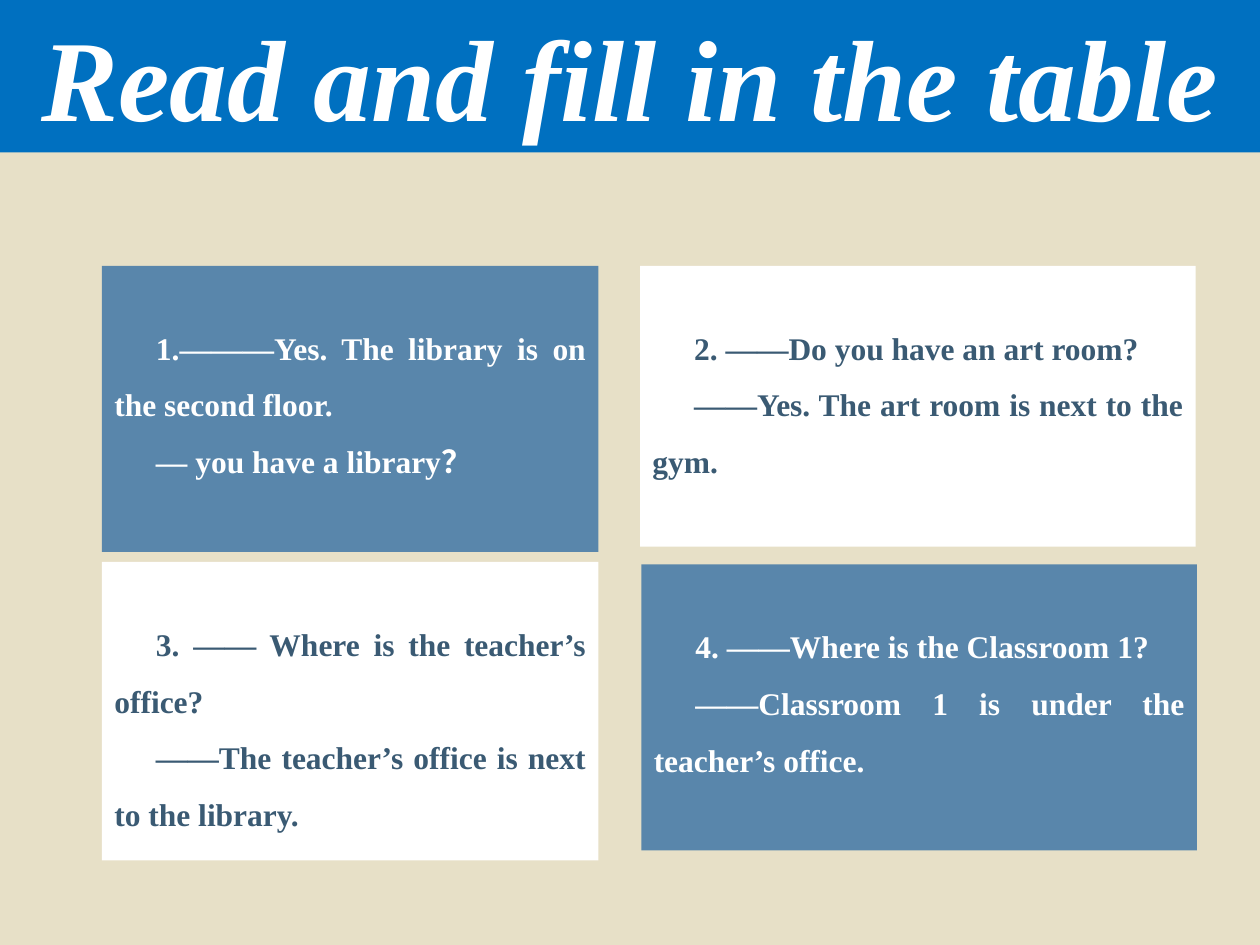
from pptx import Presentation
from pptx.dml.color import RGBColor
from pptx.enum.shapes import MSO_SHAPE
from pptx.enum.text import MSO_ANCHOR, PP_ALIGN
from pptx.util import Inches, Pt

COLORS = {
    "background": "E7E0C7",
    "banner": "0070C0",
    "white": "FFFFFF",
    "blue": "5986AB",
    "navy": "3A5A73",
}
FONT = "Times New Roman"
DIALOGUES = [
    (5.08, 2.11, 4.41, 2.23, "white", "navy",
     ["2. ——Do you have an art room? ",
      "——Yes. The art room is next to the gym."]),
    (0.81, 4.46, 3.94, 2.37, "white", "navy",
     ["3. —— Where is the teacher’s office? ",
      "——The teacher’s office is next to the library."]),
    (0.81, 2.11, 3.94, 2.27, "blue", "white",
     ["1.———Yes. The library is on the second floor.",
      "— you have a library？ "]),
    (5.09, 4.48, 4.41, 2.27, "blue", "white",
     ["4. ——Where is the Classroom 1? ",
      "——Classroom 1 is under the teacher’s office."]),
]


def rgb(name):
    """Return the palette colour with the given name."""
    return RGBColor.from_string(COLORS[name])


def add_panel(slide, left, top, width, height, fill):
    """Add a plain filled rectangle."""
    panel = slide.shapes.add_shape(
        MSO_SHAPE.RECTANGLE, Inches(left), Inches(top), Inches(width), Inches(height))
    panel.shadow.inherit = False
    panel.fill.solid()
    panel.fill.fore_color.rgb = rgb(fill)
    panel.line.fill.background()
    return panel


def write_text(panel, lines, *, size, color, align, italic=False,
               inset_top=0.05, indent=0, line_spacing=1.0):
    """Write bold paragraphs into a panel, starting below its top inset."""
    frame = panel.text_frame
    frame.word_wrap = True
    frame.vertical_anchor = MSO_ANCHOR.TOP
    frame.margin_top = Inches(inset_top)
    frame.margin_bottom = 0
    for index, line in enumerate(lines):
        paragraph = frame.paragraphs[0] if index == 0 else frame.add_paragraph()
        paragraph.alignment = align
        paragraph.line_spacing = line_spacing
        if indent:
            properties = paragraph._p.get_or_add_pPr()
            properties.set("marL", "0")
            properties.set("indent", str(Inches(indent)))
        run = paragraph.add_run()
        run.text = line
        run.font.name = FONT
        run.font.size = Pt(size)
        run.font.bold = True
        run.font.italic = italic
        run.font.color.rgb = rgb(color)


def add_banner(slide, title):
    """Add the full-width title band."""
    banner = add_panel(slide, 0, 0, 10, 1.21, "banner")
    write_text(banner, [title], size=66, color="white", align=PP_ALIGN.CENTER,
               italic=True)


def add_dialogue(slide, left, top, width, height, fill, color, lines):
    """Add one dialogue card."""
    card = add_panel(slide, left, top, width, height, fill)
    write_text(card, lines, size=18, color=color, align=PP_ALIGN.JUSTIFY,
               inset_top=0.35, indent=0.33, line_spacing=1.5)


def main():
    """Build and save the slide."""
    presentation = Presentation()
    presentation.slide_width = Inches(10)
    presentation.slide_height = Inches(7.5)
    slide = presentation.slides.add_slide(presentation.slide_layouts[6])
    slide.background.fill.solid()
    slide.background.fill.fore_color.rgb = rgb("background")
    add_banner(slide, "Read and fill in the table")
    for dialogue in DIALOGUES:
        add_dialogue(slide, *dialogue)
    presentation.save("out.pptx")


if __name__ == "__main__":
    main()
